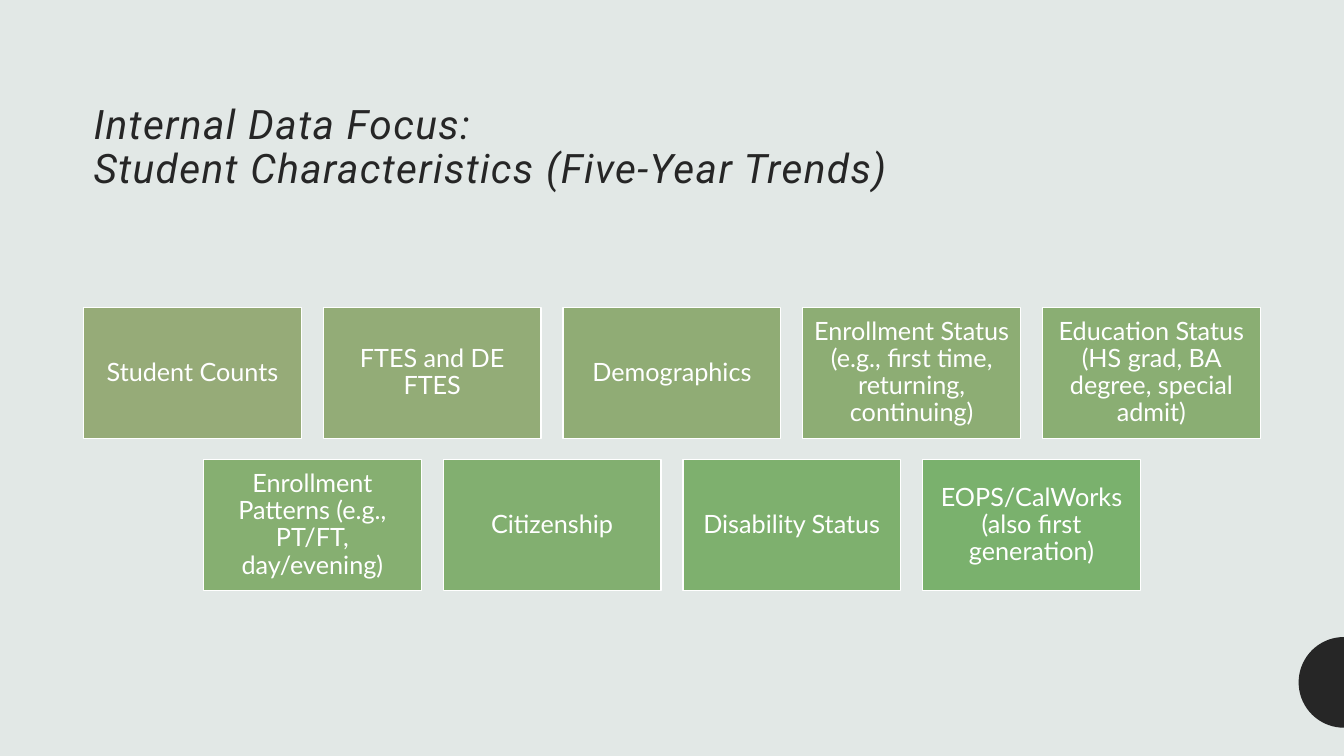
import math
from dataclasses import dataclass

from pptx import Presentation
from pptx.dml.color import RGBColor
from pptx.enum.shapes import MSO_SHAPE
from pptx.enum.text import MSO_ANCHOR, PP_ALIGN
from pptx.util import Inches, Pt

RECTANGLE = MSO_SHAPE.RECTANGLE
MIDDLE, BOTTOM = MSO_ANCHOR.MIDDLE, MSO_ANCHOR.BOTTOM
LEFT, CENTER = PP_ALIGN.LEFT, PP_ALIGN.CENTER


@dataclass(frozen=True)
class Theme:
    background: str = "E2E8E6"
    dark: str = "262626"
    light: str = "FFFFFF"
    title_font: str = "Roboto"
    tile_font: str = "Lato"
    title_size: float = 29
    tile_size: float = 18
    title_tracking: float = 1


THEME = Theme()

TITLE = "Internal Data Focus:\vStudent Characteristics (Five-Year Trends)"
TILE_ROWS = [
    [
        ("Student Counts", "96AB78"),
        ("FTES and DE FTES", "93AC77"),
        ("Demographics", "90AC75"),
        ("Enrollment Status (e.g., first time, returning, continuing)", "8DAD74"),
        ("Education Status (HS grad, BA degree, special admit)", "8AAE73"),
    ],
    [
        ("Enrollment Patterns (e.g., PT/FT, day/evening)", "86AF71"),
        ("Citizenship", "82AF70"),
        ("Disability Status", "7EB06E"),
        ("EOPS/CalWorks (also first generation)", "7AB16D"),
    ],
]


def set_fill(fill, color):
    fill.solid()
    fill.fore_color.rgb = RGBColor.from_string(color)


def write_text(shape, text, color, alignment, frame_format, font_format):
    frame = shape.text_frame
    for name, value in {"word_wrap": True, **frame_format}.items():
        setattr(frame, name, value)
    paragraph = frame.paragraphs[0]
    paragraph.text = text
    paragraph.alignment = alignment
    paragraph.line_spacing = 0.9
    for run in paragraph.runs:
        for name, value in font_format.items():
            setattr(run.font, name, value)
        run.font.color.rgb = RGBColor.from_string(color)


def add_title(slide, left, top, width, height):
    title = slide.shapes.add_textbox(
        Inches(left), Inches(top), Inches(width), Inches(height))
    write_text(title, TITLE, THEME.dark, LEFT, {"vertical_anchor": BOTTOM},
               {"name": THEME.title_font, "size": Pt(THEME.title_size), "italic": True})
    for run in title.text_frame.paragraphs[0].runs:
        run.font._element.set("spc", str(round(THEME.title_tracking * 100)))


def add_edge_half_circle(slide, right, top, radius, steps=36):
    """Draw the left half of a circle whose flat side lies on the right edge."""
    points = []
    for step in range(steps + 1):
        angle = math.pi * step / steps
        points.append((Inches(right - radius * math.sin(angle)),
                       Inches(top + radius - radius * math.cos(angle))))
    builder = slide.shapes.build_freeform(*points[0])
    builder.add_line_segments(points[1:], close=True)
    half_circle = builder.convert_to_shape()
    half_circle.shadow.inherit = False
    set_fill(half_circle.fill, THEME.dark)
    half_circle.line.fill.background()


def add_tile(slide, left, top, width, height, text, color):
    tile = slide.shapes.add_shape(
        RECTANGLE, Inches(left), Inches(top), Inches(width), Inches(height))
    tile.shadow.inherit = False
    set_fill(tile.fill, color)
    set_fill(tile.line.fill, THEME.light)
    tile.line.width = Pt(1)
    sides = ("left", "top", "right", "bottom")
    frame_format = {f"margin_{side}": Inches(0.07) for side in sides}
    write_text(tile, text, THEME.light, CENTER,
               {"vertical_anchor": MIDDLE, **frame_format},
               {"name": THEME.tile_font, "size": Pt(THEME.tile_size)})


def add_tile_grid(slide, left, top, width, height):
    """Fill the box with rows of equal tiles, each row centred."""
    tile_width, tile_height = 2.16, 1.3
    columns = max(len(row) for row in TILE_ROWS)
    gap_x = (width - columns * tile_width) / (columns - 1)
    gap_y = (height - len(TILE_ROWS) * tile_height) / (len(TILE_ROWS) - 1)
    pitch = tile_width + gap_x
    for row_index, row in enumerate(TILE_ROWS):
        row_left = left + (columns - len(row)) * pitch / 2
        row_top = top + row_index * (tile_height + gap_y)
        for column, (text, color) in enumerate(row):
            add_tile(slide, row_left + column * pitch, row_top,
                     tile_width, tile_height, text, color)


def main():
    presentation = Presentation()
    presentation.slide_width = Inches(13.33)
    presentation.slide_height = Inches(7.5)
    slide = presentation.slides.add_slide(presentation.slide_layouts[6])
    set_fill(slide.background.fill, THEME.background)
    add_title(slide, 0.83, 0.46, 11.67, 1.5)
    add_edge_half_circle(slide, 13.33, 6.32, 0.45)
    add_tile_grid(slide, 0.83, 3.05, 11.67, 2.81)
    presentation.save("out.pptx")


if __name__ == "__main__":
    main()
